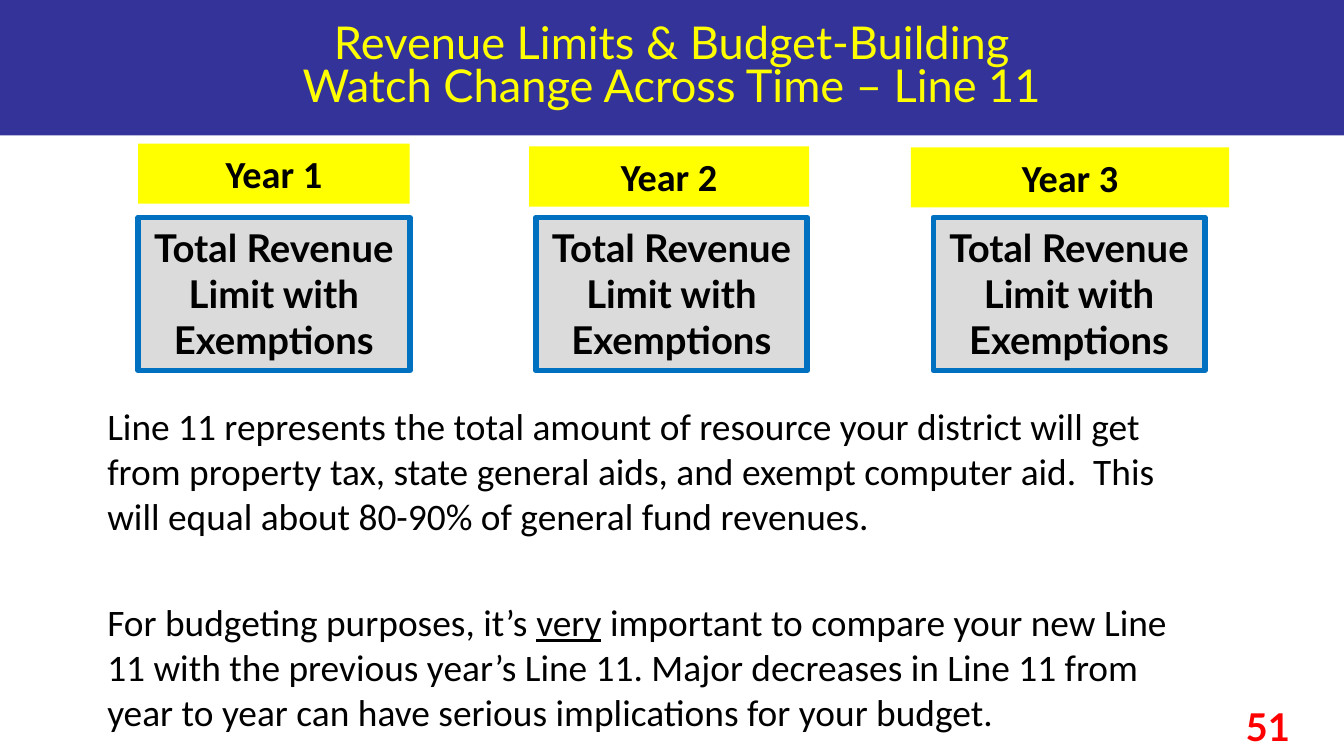
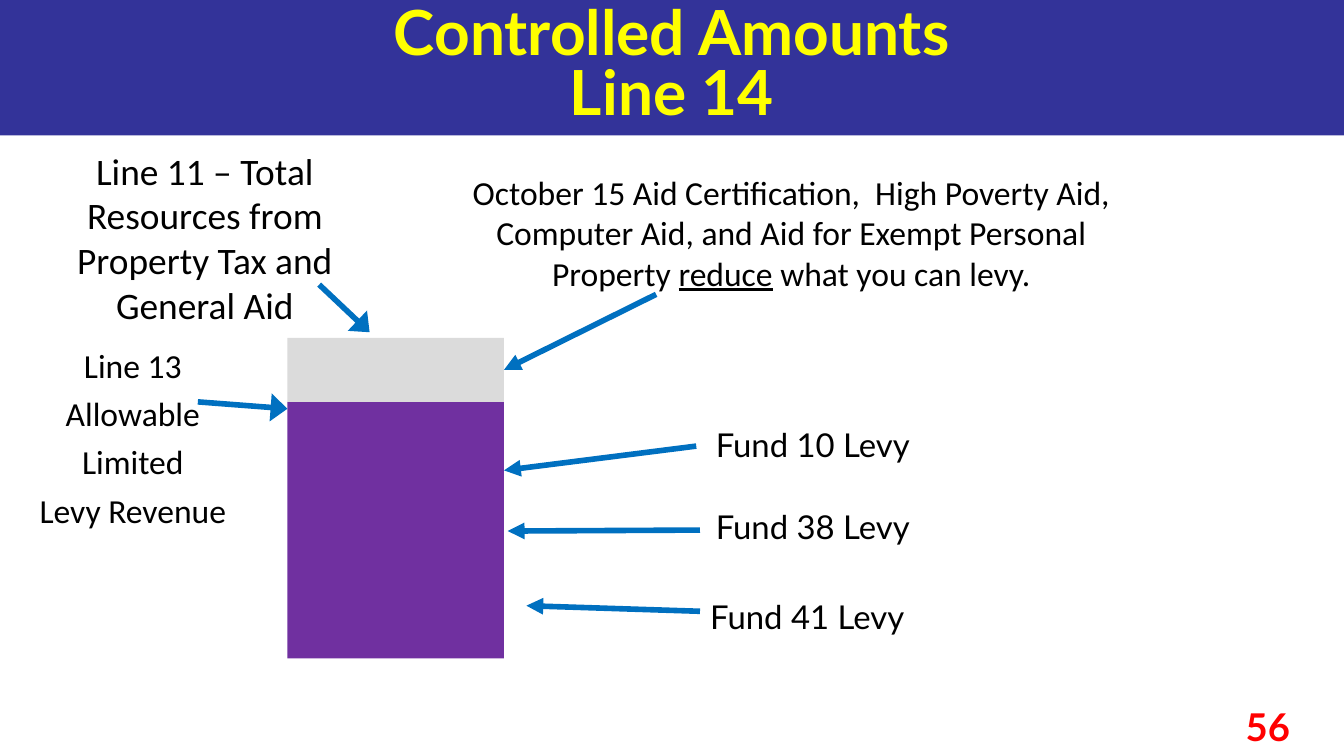
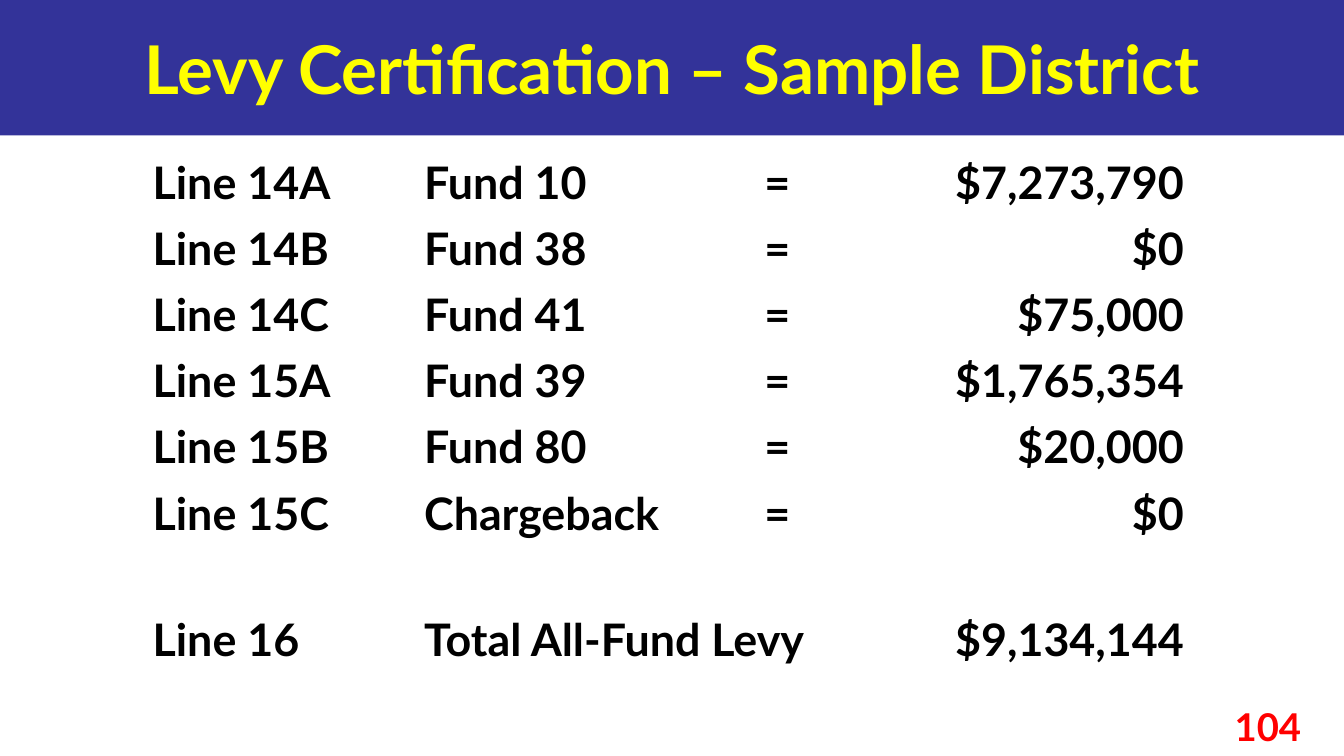
from lxml.etree import SubElement
from pptx import Presentation
from pptx.dml.color import RGBColor
from pptx.enum.shapes import MSO_CONNECTOR as Connector, MSO_SHAPE as Shape
from pptx.enum.text import MSO_ANCHOR as Anchor, PP_ALIGN as Align
from pptx.oxml.ns import qn
from pptx.util import Pt

COLORS = {
    "band": "333399",
    "title": "FFFF00",
    "number": "FF0000",
    "text": "000000",
    "year": "FFFF00",
    "gray": "DBDBDB",
    "blue": "0070C0",
    "levy": "7030A0",
}
SLIDE_WIDTH, SLIDE_HEIGHT = 720, 405
BAND_HEIGHT = 72.6

TITLE = {"name": "Lato", "size": Pt(36), "bold": True}
NUMBER = {"name": "Lato", "size": Pt(20.5), "bold": True}
YEAR = {"name": "Calibri", "size": Pt(20.5), "bold": True}
BODY = {"name": "Calibri", "size": Pt(20), "bold": False}
NOTE = {**BODY, "size": Pt(18)}
FUND = {"name": "Lato", "size": Pt(17.6), "bold": False}
CELL = {"name": "Lato", "size": Pt(24), "bold": True}
CELL_MARGINS = {
    "margin_left": Pt(6.75),
    "margin_right": Pt(6.75),
    "margin_top": Pt(3.3),
    "margin_bottom": Pt(3.3),
}

YEAR_BOXES = [(74, 77, 145.5), (283.5, 78.5, 150), (488, 79, 170.5)]
FUND_LABELS = [
    ("Fund 10 Levy", 360, 224, 151),
    ("Fund 38 Levy", 360, 268, 151),
    ("Fund 41 Levy", 354.5, 316, 156),
]
FUND_ARROWS = [
    ((373, 239), (270, 252)),
    ((375, 284), (272, 284.5)),
    ((375, 327.5), (282, 324.5)),
]
LEVY_ROWS = [
    ("Line 14A", "Fund 10", "=", "$7,273,790"),
    ("Line 14B", "Fund 38", "=", "$0"),
    ("Line 14C", "Fund 41", "=", "$75,000"),
    ("Line 15A", "Fund 39", "=", "$1,765,354"),
    ("Line 15B", "Fund 80", "=", "$20,000"),
    ("Line 15C", "Chargeback", "=", "$0"),
    ("", "", "", ""),
    ("Line 16", "Total All-Fund Levy", "", "$9,134,144"),
]
LEVY_COLUMNS = [
    (145.5, Align.LEFT),
    (160, Align.LEFT),
    (72, Align.CENTER),
    (188.5, Align.RIGHT),
]


def apply_format(target, values):
    for name, value in values.items():
        setattr(target, name, value)


def rgb(color):
    return RGBColor.from_string(COLORS[color])


def write_text(frame, lines, font, color="text", align=Align.CENTER, gap=0, spacing=None):
    frame.word_wrap = True
    for index, line in enumerate(lines):
        paragraph = frame.paragraphs[0] if index == 0 else frame.add_paragraph()
        apply_format(paragraph, {"alignment": align, "line_spacing": spacing})
        if index:
            paragraph.space_before = Pt(gap)
        for position, part in enumerate(line.split("|")):
            run = paragraph.add_run()
            run.text = part
            apply_format(run.font, font)
            run.font.color.rgb = rgb(color)
            if position % 2:
                run.font.underline = True


def add_text(slide, box, lines, font, **options):
    shape = slide.shapes.add_textbox(*map(Pt, box))
    write_text(shape.text_frame, lines, font, **options)
    return shape


def add_box(slide, box, fill, line=None, text=None, font=None):
    shape = slide.shapes.add_shape(Shape.RECTANGLE, *map(Pt, box))
    shape.shadow.inherit = False
    shape.fill.solid()
    shape.fill.fore_color.rgb = rgb(fill)
    if line:
        shape.line.color.rgb = rgb(line)
        shape.line.width = Pt(3)
    else:
        shape.line.fill.background()
    if text:
        shape.text_frame.vertical_anchor = Anchor.TOP
        write_text(shape.text_frame, [text], font)
    return shape


def add_arrow(slide, start, end, head_width="med"):
    arrow = slide.shapes.add_connector(Connector.STRAIGHT, *map(Pt, start + end))
    arrow.line.color.rgb = rgb("blue")
    arrow.line.width = Pt(3)
    line = arrow.line._get_or_add_ln()
    SubElement(line, qn("a:tailEnd"), type="triangle", w=head_width, len="med")
    SubElement(arrow._element.spPr, qn("a:effectLst"))
    return arrow


def add_slide(presentation, title_lines, number, font=TITLE, spacing=None):
    slide = presentation.slides.add_slide(presentation.slide_layouts[6])
    add_box(slide, (-1, 0, SLIDE_WIDTH + 1, BAND_HEIGHT), "band")
    add_text(slide, (638.5, 373, 81.5, 32), [number], NUMBER, color="number")
    title = add_text(slide, (0, 0, SLIDE_WIDTH, BAND_HEIGHT), title_lines, font,
                     color="title", spacing=spacing)
    title.text_frame.vertical_anchor = Anchor.MIDDLE
    return slide


def build_revenue_limits(presentation):
    slide = add_slide(
        presentation,
        ["Revenue Limits & Budget-Building", "Watch Change Across Time – Line 11"],
        "51", {**TITLE, "size": Pt(24.2), "bold": False}, 0.8)
    for index, (left, top, width) in enumerate(YEAR_BOXES):
        add_box(slide, (left, top, width, 32.2), "year", text=f"Year {index + 1}", font=YEAR)
    for index in range(len(YEAR_BOXES)):
        add_box(slide, (74 + 213 * index, 116.5, 145.5, 82), "gray", "blue",
                "Total Revenue Limit with Exemptions", NUMBER)
    add_text(slide, (50.4, 212.5, 596, 185), [
        "Line 11 represents the total amount of resource your district will get from "
        "property tax, state general aids, and exempt computer aid.  This will equal "
        "about 80-90% of general fund revenues.",
        "For budgeting purposes, it’s |very| important to compare your new Line 11 with "
        "the previous year’s Line 11. Major decreases in Line 11 from year to year can "
        "have serious implications for your budget.",
    ], BODY, align=Align.LEFT, gap=33)


def build_controlled_amounts(presentation):
    slide = add_slide(presentation, ["Controlled Amounts", "Line 14"], "56",
                      {**TITLE, "size": Pt(33.3)}, 0.8)
    add_text(slide, (17.3, 75.6, 185, 104.5),
             ["Line 11 – Total Resources from Property Tax and General Aid"], BODY)
    add_text(slide, (244, 88.5, 360, 73), [
        "October 15 Aid Certification,  High Poverty Aid, Computer Aid, and Aid for "
        "Exempt Personal Property |reduce| what you can levy."], NOTE)
    add_text(slide, (7.2, 181, 128, 103),
             ["Line 13", "Allowable", "Limited", "Levy Revenue"], NOTE, gap=4.3)
    add_box(slide, (154, 215.3, 116, 137.5), "levy")
    aid_box = add_box(slide, (154, 181, 116, 34.3), "gray")
    add_arrow(slide, (171, 152.5), (198, 178), "lg")
    add_arrow(slide, (106, 215.3), (154, 219), "lg")
    aid_arrow = add_arrow(slide, (351.5, 157.7), (270, 198.5))
    aid_arrow.end_connect(aid_box, 3)
    for text, left, top, width in FUND_LABELS:
        add_text(slide, (left, top, width, 28.8), [text], FUND)
    for start, end in FUND_ARROWS:
        add_arrow(slide, start, end)


def build_levy_certification(presentation):
    slide = add_slide(presentation, ["Levy Certification – Sample District"], "104")
    row_height = 32.4
    width = sum(column_width for column_width, _ in LEVY_COLUMNS)
    box = (75, 80, width, row_height * len(LEVY_ROWS))
    table = slide.shapes.add_table(
        len(LEVY_ROWS), len(LEVY_COLUMNS), *map(Pt, box)).table
    apply_format(table, {"first_row": False, "horz_banding": False})
    for column, (column_width, _) in zip(table.columns, LEVY_COLUMNS):
        column.width = Pt(column_width)
    for row_index, values in enumerate(LEVY_ROWS):
        table.rows[row_index].height = Pt(row_height)
        for column_index, value in enumerate(values):
            cell = table.cell(row_index, column_index)
            cell.fill.background()
            apply_format(cell, CELL_MARGINS)
            if value:
                write_text(cell.text_frame, [value], CELL,
                           align=LEVY_COLUMNS[column_index][1])
    last_row = len(LEVY_ROWS) - 1
    table.cell(last_row, 1).merge(table.cell(last_row, 2))


def main():
    presentation = Presentation()
    apply_format(presentation, {"slide_width": Pt(SLIDE_WIDTH), "slide_height": Pt(SLIDE_HEIGHT)})
    build_revenue_limits(presentation)
    build_controlled_amounts(presentation)
    build_levy_certification(presentation)
    presentation.save("out.pptx")


if __name__ == "__main__":
    main()
